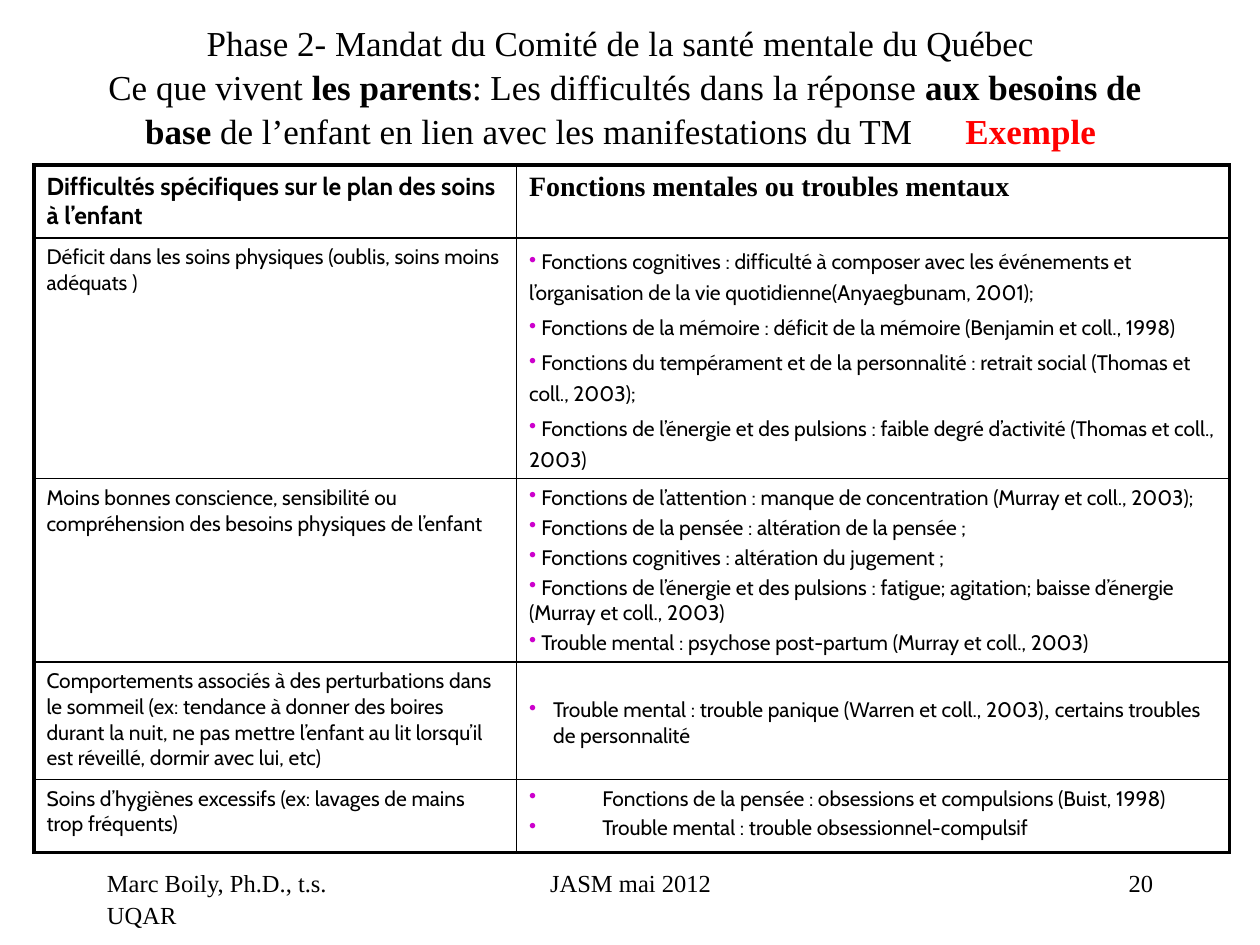
from dataclasses import dataclass
from lxml.etree import SubElement
from pptx import Presentation
from pptx.dml.color import RGBColor
from pptx.enum.text import MSO_ANCHOR, MSO_AUTO_SIZE, PP_ALIGN
from pptx.oxml.ns import qn
from pptx.util import Inches, Length, Pt


@dataclass(frozen=True)
class Theme:
    serif: str = "Times New Roman"
    sans: str = "Cabin"
    black: RGBColor = RGBColor(0, 0, 0)
    red: RGBColor = RGBColor(0xFF, 0, 0)
    bullet: RGBColor = RGBColor(0xCC, 0, 0xCC)
    title: Length = Pt(20)
    right_head: Length = Pt(16)
    head: Length = Pt(14)
    cell: Length = Pt(12)
    foot: Length = Pt(14)
    gap: Length = Pt(2.4)
    outer: Length = Pt(2.25)
    inner: Length = Pt(1)


@dataclass(frozen=True)
class Row:
    """Body row; each item is split into runs that alternate sans and serif."""
    height: float
    need: str
    items: tuple[tuple[str, ...], ...]
    indent: float = 0
    spacing: float = 1
    top: float = 0.05


@dataclass(frozen=True)
class Foot:
    text: str
    left: float
    width: float
    align: PP_ALIGN


THEME = Theme()
COLS = (3.83, 5.66)
HEAD = 0.58
ROWS = (
    Row(1.91, "Déficit dans les soins physiques (oublis, soins moins adéquats )", (
        (" Fonctions cognitives : difficulté à composer avec les événements et "
         "l’organisation de la vie quotidienne(Anyaegbunam, 2001);",),
        (" Fonctions de la mémoire : déficit de la mémoire (Benjamin et coll., 1998)",),
        (" Fonctions du tempérament et de la personnalité : retrait social "
         "(Thomas et coll., 2003);",),
        (" Fonctions de l’énergie et des pulsions : faible degré d’activité "
         "(Thomas et coll., 2003)",),
    ), spacing=1.2),
    Row(1.45, "Moins bonnes conscience, sensibilité ou compréhension des besoins "
        "physiques de l’enfant", (
        (" Fonctions de l’attention : manque de concentration (Murray et coll., 2003);",),
        (" Fonctions de la pensée : altération de la pensée ;",),
        (" Fonctions cognitives : altération du jugement ;",),
        (" Fonctions de l’énergie et des pulsions : fatigue; agitation; "
         "baisse d’énergie (Murray et coll., 2003)",),
        (" Trouble mental : psychose post-partum (Murray et coll., 2003)",),
    )),
    Row(0.93, "Comportements associés à des perturbations dans le sommeil (ex: tendance "
        "à donner des boires durant la nuit, ne pas mettre l’enfant au lit lorsqu’il "
        "est réveillé, dormir avec lui, etc)", (
        ("Trouble mental : trouble panique (Warren et coll., 2003)", ", ",
         "certains troubles de personnalité"),
    ), indent=0.19, top=0.28),
    Row(0.58, "Soins d’hygiènes excessifs (ex: lavages de mains trop fréquents)", (
        ("Fonctions de la pensée : obsessions et compulsions (Buist, 1998)",),
        ("Trouble mental : trouble obsessionnel-compulsif",),
    ), indent=0.58),
)
FEET = (
    Foot("JASM mai 2012", 3.42, 3.17, PP_ALIGN.CENTER),
    Foot("20", 7.17, 2.08, PP_ALIGN.RIGHT),
    Foot("Marc Boily, Ph.D., t.s. UQAR", 0.75, 2.08, PP_ALIGN.LEFT),
)


def style(para, name: str, size: Length, bold: bool = False) -> None:
    font = para.font
    font.name, font.size, font.bold = name, size, bold
    font.color.rgb = THEME.black


def add_bullet(para, indent: float) -> None:
    props = para._p.get_or_add_pPr()
    props.set("marL", str(Inches(indent)))
    props.set("indent", str(-Inches(indent)))
    color = SubElement(props, qn("a:buClr"))
    SubElement(color, qn("a:srgbClr"), val=str(THEME.bullet))
    SubElement(props, qn("a:buChar"), char="•")


def add_edges(cell, row: int, col: int) -> None:
    """Heavy lines round the table, thin lines inside it."""
    props = cell._tc.get_or_add_tcPr()
    edges = {"L": col == 0, "R": col == len(COLS) - 1,
             "T": row == 0, "B": row == len(ROWS)}
    for side, heavy in edges.items():
        width = THEME.outer if heavy else THEME.inner
        line = SubElement(props, qn(f"a:ln{side}"), w=str(width))
        fill = SubElement(line, qn("a:solidFill"))
        SubElement(fill, qn("a:srgbClr"), val=str(THEME.black))
    cell.fill.background()


def fill_items(cell, row: Row) -> None:
    cell.margin_top = Inches(row.top)
    frame = cell.text_frame
    for pos, item in enumerate(row.items):
        para = frame.add_paragraph() if pos else frame.paragraphs[0]
        add_bullet(para, row.indent)
        style(para, THEME.sans, THEME.cell)
        para.line_spacing = row.spacing
        para.space_before = THEME.gap if pos else Pt(0)
        for part, text in enumerate(item):
            run = para.add_run()
            run.text = text
            if part % 2:
                run.font.name = THEME.serif


def add_grid(slide) -> None:
    heights = (HEAD, *(row.height for row in ROWS))
    table = slide.shapes.add_table(
        len(heights), len(COLS), Inches(0.27), Inches(1.31),
        Inches(sum(COLS)), Inches(sum(heights))).table
    table.first_row = table.horz_banding = False
    for col, width in zip(table.columns, COLS):
        col.width = Inches(width)
    for pos, height in enumerate(heights):
        table.rows[pos].height = Inches(height)
        for col in range(len(COLS)):
            add_edges(table.cell(pos, col), pos, col)

    heads = (
        ("Difficultés spécifiques sur le plan des soins à l’enfant", THEME.sans, THEME.head),
        ("Fonctions mentales ou troubles mentaux", THEME.serif, THEME.right_head),
    )
    for col, (text, name, size) in enumerate(heads):
        cell = table.cell(0, col)
        cell.text = text
        style(cell.text_frame.paragraphs[0], name, size, bold=True)
    for pos, row in enumerate(ROWS, 1):
        cell = table.cell(pos, 0)
        cell.text = row.need
        style(cell.text_frame.paragraphs[0], THEME.sans, THEME.cell)
        fill_items(table.cell(pos, 1), row)


def add_title(slide) -> None:
    title = slide.shapes.title
    title.left, title.top = Inches(0.51), Inches(0.21)
    title.width, title.height = Inches(8.9), Inches(0.94)
    frame = title.text_frame
    frame.auto_size = MSO_AUTO_SIZE.NONE
    frame.vertical_anchor = MSO_ANCHOR.MIDDLE
    para = frame.paragraphs[0]
    para.alignment = PP_ALIGN.CENTER
    para.line_spacing = 1.04
    style(para, THEME.serif, THEME.title)

    def add(text: str, bold: bool = False):
        run = para.add_run()
        run.text, run.font.bold = text, bold
        return run

    add("Phase 2- Mandat du Comité de la santé mentale du Québec ")
    para.add_line_break()
    add("Ce que vivent ")
    add("les parents", True)
    add(": Les difficultés dans la réponse ")
    add("aux besoins de base ", True)
    add("de l’enfant en lien avec les manifestations du TM")
    space = add(" ")
    space.font._element.set("spc", "2500")
    add("Exemple ", True).font.color.rgb = THEME.red


def add_foot(slide, foot: Foot) -> None:
    box = slide.shapes.add_textbox(
        Inches(foot.left), Inches(6.83), Inches(foot.width), Inches(0.5))
    frame = box.text_frame
    frame.word_wrap = True
    frame.text = foot.text
    para = frame.paragraphs[0]
    para.alignment = foot.align
    para.line_spacing = 1.06
    style(para, THEME.serif, THEME.foot)


def main() -> None:
    deck = Presentation()
    deck.slide_width, deck.slide_height = Inches(10), Inches(7.5)
    slide = deck.slides.add_slide(deck.slide_layouts[5])
    add_title(slide)
    add_grid(slide)
    for foot in FEET:
        add_foot(slide, foot)
    deck.save("out.pptx")


if __name__ == "__main__":
    main()
